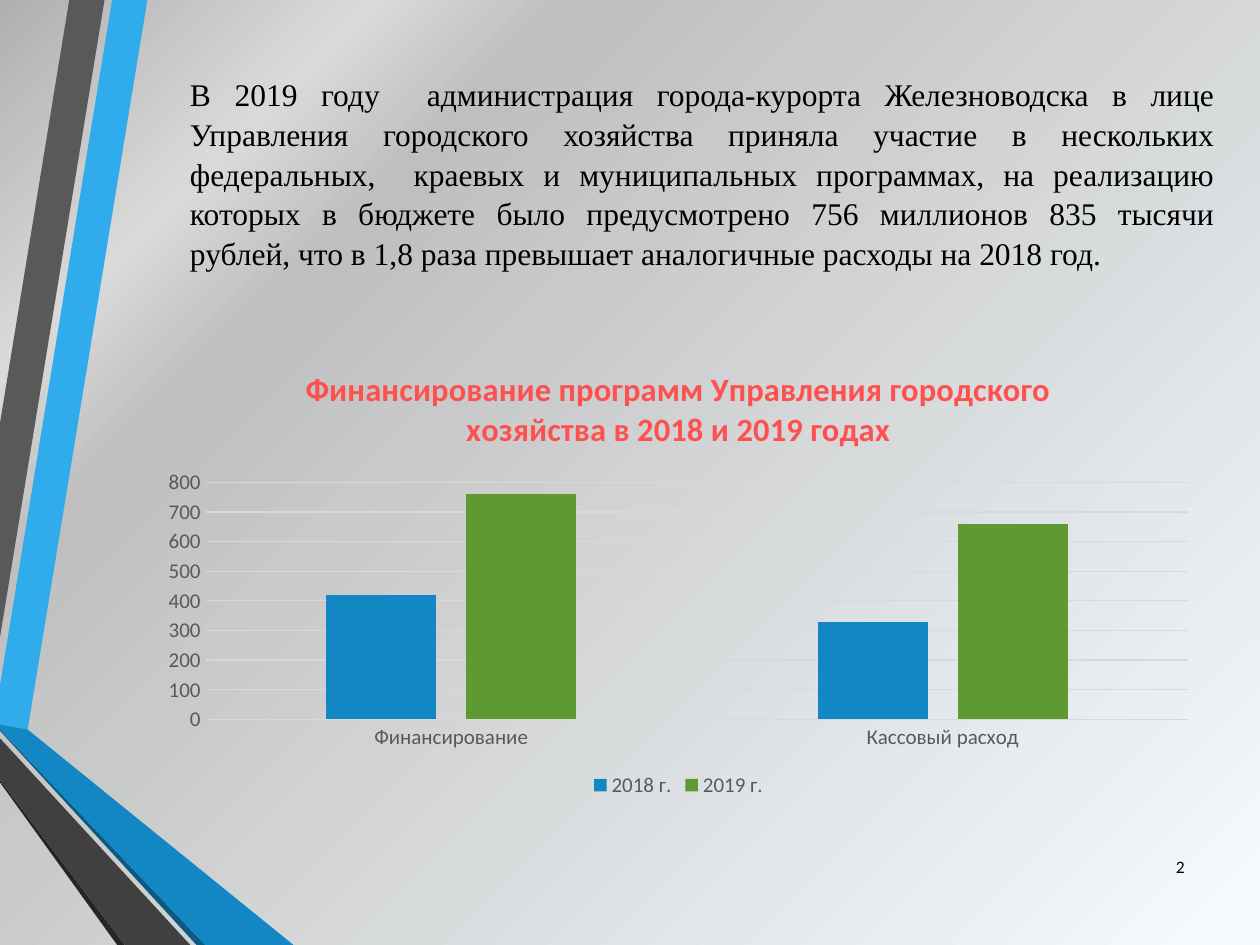
import lxml.etree
import pptx
import pptx.chart.data
import pptx.dml.color
import pptx.enum.chart
import pptx.enum.text
import pptx.oxml
import pptx.util
from pptx.util import Inches

BODY = (
    "В 2019 году  администрация города-курорта Железноводска в лице Управления "
    "городского хозяйства приняла участие в нескольких федеральных,  краевых и "
    "муниципальных программах, на реализацию которых в бюджете было предусмотрено "
    "756 миллионов 835 тысячи рублей, что в 1,8 раза превышает аналогичные расходы "
    "на 2018 год."
)
CHART_TITLE = "Финансирование программ Управления городского хозяйства в 2018 и 2019 годах"
CATEGORIES = ["Финансирование", "Кассовый расход"]
SERIES = [("2018 г.", (420, 330), "1287C3"), ("2019 г.", (760, 660), "5F9934")]
BACKGROUND_STOPS = [(0, "F5FBFE"), (74, "BFBFBF"), (83, "D9D9D9"), (100, "B0B0B0")]
RIBBONS = [
    ("30ACEC", [(0, 5.44), (0, 5.75), (0.22, 5.79), (1.17, 0), (0.89, 0)]),
    ("595959", [(0.83, 0), (0.55, 0), (0, 3.36), (0, 5.06)]),
    ("262626", [(0, 6.19), (0, 6.21), (0.93, 7.5), (0.99, 7.5)]),
    ("0C5A82", [(0, 5.79), (0, 5.8), (1.56, 7.5), (1.63, 7.5)]),
    ("1287C3", [(0, 5.79), (1.63, 7.5), (2.33, 7.5), (0.22, 5.79), (0, 5.75)]),
    ("404040", [(0, 6.19), (0.99, 7.5), (1.51, 7.5), (0, 5.86)]),
]


def color(value):
    """Return the colour for a hex string."""
    return pptx.dml.color.RGBColor.from_string(value)


def style_font(font, size, value, name="Calibri", bold=False):
    """Set size, colour, typeface and weight of a font."""
    font.size = pptx.util.Pt(size)
    font.color.rgb = color(value)
    font.name = name
    font.bold = bold


def style_line(line, value):
    """Draw a thin line in the given colour."""
    line.color.rgb = color(value)
    line.width = pptx.util.Pt(0.75)


def set_background(slide):
    """Fill the background with a radial gradient from the lower right corner."""
    slide.background.fill.solid()
    solid = next(slide.element.iter(pptx.oxml.ns.qn("a:solidFill")))
    stops = "".join(
        f'<a:gs pos="{position * 1000}"><a:srgbClr val="{value}"/></a:gs>'
        for position, value in BACKGROUND_STOPS
    )
    gradient = lxml.etree.fromstring(
        '<a:gradFill xmlns:a="http://schemas.openxmlformats.org/drawingml/2006/main" '
        f'rotWithShape="1"><a:gsLst>{stops}</a:gsLst><a:path path="circle">'
        '<a:fillToRect l="100000" t="100000"/></a:path></a:gradFill>'
    )
    solid.getparent().replace(solid, gradient)


def add_ribbon(slide, value, points):
    """Add a closed polygon in one colour."""
    corners = [(Inches(x), Inches(y)) for x, y in points]
    builder = slide.shapes.build_freeform(*corners[0], scale=1.0)
    builder.add_line_segments(corners[1:], close=True)
    shape = builder.convert_to_shape()
    shape.shadow.inherit = False
    shape.fill.solid()
    shape.fill.fore_color.rgb = color(value)
    shape.line.fill.background()


def add_text(slide, text, box, size, name, alignment, spacing=1.0):
    """Add a wrapped, vertically centred text box."""
    shape = slide.shapes.add_textbox(*map(Inches, box))
    frame = shape.text_frame
    frame.word_wrap = True
    frame.vertical_anchor = pptx.enum.text.MSO_ANCHOR.MIDDLE
    frame.text = text
    paragraph = frame.paragraphs[0]
    paragraph.alignment = alignment
    paragraph.line_spacing = spacing
    style_font(paragraph.runs[0].font, size, "000000", name)


def style_axes(chart):
    """Set scale, labels, lines and gridlines of both axes."""
    for axis in (chart.category_axis, chart.value_axis):
        axis.major_tick_mark = pptx.enum.chart.XL_TICK_MARK.NONE
        axis.minor_tick_mark = pptx.enum.chart.XL_TICK_MARK.NONE
        style_font(axis.tick_labels.font, 12, "595959")
    style_line(chart.category_axis.format.line, "D9D9D9")
    value_axis = chart.value_axis
    value_axis.minimum_scale = 0
    value_axis.maximum_scale = 800
    value_axis.major_unit = 100
    value_axis.format.line.fill.background()
    style_line(value_axis.major_gridlines.format.line, "D9D9D9")


def add_funding_chart(slide):
    """Add the clustered column chart of funding by year."""
    data = pptx.chart.data.CategoryChartData()
    data.categories = CATEGORIES
    for name, values, _ in SERIES:
        data.add_series(name, values)
    chart = slide.shapes.add_chart(
        pptx.enum.chart.XL_CHART_TYPE.COLUMN_CLUSTERED,
        Inches(1.17), Inches(2.73), Inches(8.43), Inches(3.64), data,
    ).chart
    style_font(chart.font, 10, "000000")
    title = chart.chart_title.text_frame
    title.text = CHART_TITLE
    style_font(title.paragraphs[0].runs[0].font, 18.6, "FF5050", bold=True)
    chart.chart_title.include_in_layout = False
    chart.has_legend = True
    chart.legend.position = pptx.enum.chart.XL_LEGEND_POSITION.BOTTOM
    chart.legend.include_in_layout = False
    style_font(chart.legend.font, 12, "595959")
    style_axes(chart)
    plot = chart.plots[0]
    plot.gap_width = 219
    plot.overlap = -27
    plot.vary_by_categories = False
    for series, (_, _, value) in zip(plot.series, SERIES):
        series.format.fill.solid()
        series.format.fill.fore_color.rgb = color(value)


def main():
    """Build the slide and save it."""
    presentation = pptx.Presentation()
    presentation.slide_width = Inches(10)
    presentation.slide_height = Inches(7.5)
    slide = presentation.slides.add_slide(presentation.slide_layouts[6])
    set_background(slide)
    for value, points in RIBBONS:
        add_ribbon(slide, value, points)
    align = pptx.enum.text.PP_ALIGN
    add_text(slide, BODY, (1.41, 0.31, 8.33, 2.12), 18, "Times New Roman", align.JUSTIFY, 1.05)
    add_text(slide, "2", (9.03, 6.68, 0.47, 0.4), 10, "Calibri", align.RIGHT)
    add_funding_chart(slide)
    presentation.save("out.pptx")


if __name__ == "__main__":
    main()
